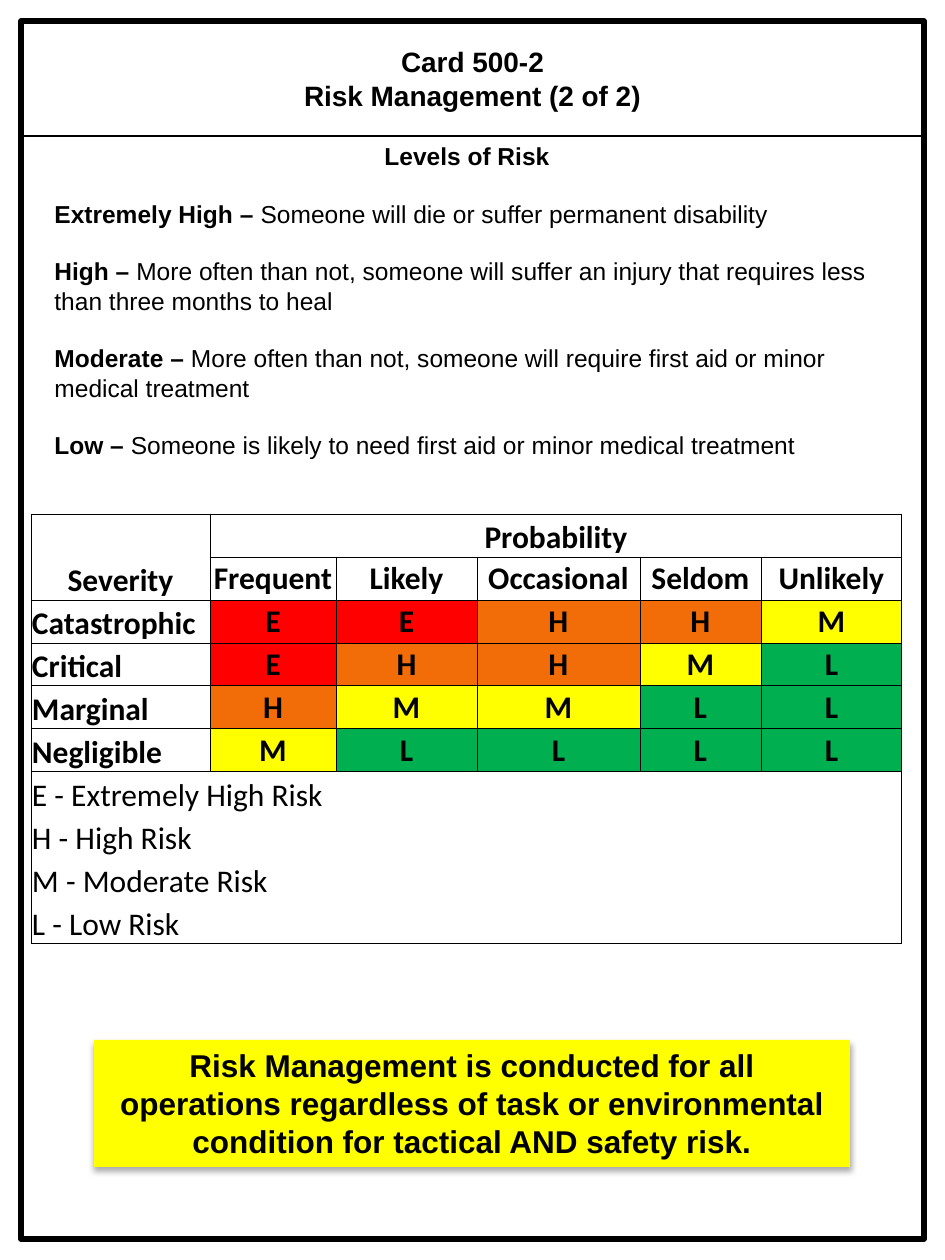
from dataclasses import dataclass

from lxml import etree
from pptx import Presentation
from pptx import util as u
from pptx.dml.color import RGBColor
from pptx.enum import shapes, text
from pptx.oxml import ns


@dataclass(frozen=True)
class Theme:
    ink: str = "000000"
    notice: str = "FFFF00"
    body_font: str = "Arial"
    matrix_font: str = "Calibri"
    title_size: int = 16
    body_size: int = 14
    matrix_size: int = 18
    notice_size: int = 18
    frame_line: float = 3.25
    rule_line: float = 1
    cell_line: float = 0.5


THEME = Theme()
RISK_COLOURS = {"E": "FF0000", "H": "F26C08", "M": "FFFF00", "L": "00B050"}
CENTER = text.PP_ALIGN.CENTER
MIDDLE = text.MSO_ANCHOR.MIDDLE
BOTTOM = text.MSO_ANCHOR.BOTTOM

LEVELS = [
    ("Extremely High – ", "Someone will die or suffer permanent disability"),
    ("High – ", "More often than not, someone will suffer an injury that "
                "requires less than three months to heal"),
    ("Moderate – ", "More often than not, someone will require first aid or "
                    "minor medical treatment"),
    ("Low – ", "Someone is likely to need first aid or minor medical treatment"),
]
PROBABILITIES = ["Frequent", "Likely", "Occasional", "Seldom", "Unlikely"]
SEVERITIES = {
    "Catastrophic": "EEHHM",
    "Critical": "EHHML",
    "Marginal": "HMMLL",
    "Negligible": "MLLLL",
}
LEGEND = ["E - Extremely High Risk", "H - High Risk", "M - Moderate Risk", "L - Low Risk"]
COLUMN_WIDTHS = [164, 15, 126, 141, 163, 121, 141]
ROW_HEIGHT = 43


def px(length):
    return u.Emu(round(length * 914400 / 126))


def box(left, top, width, height):
    return [px(length) for length in (left, top, width, height)]


def style(paragraph, size, font=THEME.body_font, bold=None, align=None):
    paragraph.font.size = u.Pt(size)
    paragraph.font.name = font
    paragraph.font.bold = bold
    paragraph.font.color.rgb = RGBColor.from_string(THEME.ink)
    paragraph.alignment = align


def add_outline(slide, area, weight):
    outline = slide.shapes.add_shape(shapes.MSO_SHAPE.RECTANGLE, *box(*area))
    outline.shadow.inherit = False
    outline.fill.background()
    outline.line.color.rgb = RGBColor.from_string(THEME.ink)
    outline.line.width = u.Pt(weight)
    return outline


def add_title(slide, area, title):
    frame = add_outline(slide, area, THEME.rule_line).text_frame
    frame.word_wrap = True
    frame.vertical_anchor = MIDDLE
    frame.paragraphs[0].text = title
    style(frame.paragraphs[0], THEME.title_size, bold=True, align=CENTER)


def add_text_area(slide, area):
    area_box = slide.shapes.add_textbox(*box(*area))
    area_box.text_frame.word_wrap = True
    area_box.text_frame.auto_size = text.MSO_AUTO_SIZE.SHAPE_TO_FIT_TEXT
    return area_box


def add_notice(slide, area, message):
    notice = add_text_area(slide, area)
    notice.fill.solid()
    notice.fill.fore_color.rgb = RGBColor.from_string(THEME.notice)
    paragraph = notice.text_frame.paragraphs[0]
    paragraph.text = message
    style(paragraph, THEME.notice_size, bold=True, align=CENTER)
    effects = etree.SubElement(notice.element.spPr, ns.qn("a:effectLst"))
    shadow = etree.SubElement(effects, ns.qn("a:outerShdw"), blurRad=str(u.Pt(3.5)),
                              dist=str(u.Pt(2.2)), dir="5400000", rotWithShape="0")
    colour = etree.SubElement(shadow, ns.qn("a:srgbClr"), val=THEME.ink)
    etree.SubElement(colour, ns.qn("a:alpha"), val="32000")


def add_levels(slide, area, heading, levels):
    frame = add_text_area(slide, area).text_frame
    frame.paragraphs[0].text = heading
    style(frame.paragraphs[0], THEME.body_size, bold=True, align=CENTER)
    for level, meaning in levels:
        paragraph = frame.add_paragraph()
        style(paragraph, THEME.body_size)
        paragraph.space_before = u.Pt(16.1)
        for words, bold in ((level, True), (meaning, False)):
            run = paragraph.add_run()
            run.text = words
            run.font.bold = bold


def set_borders(cell, sides):
    properties = cell._tc.get_or_add_tcPr()
    for side in "LRTB":
        line = etree.SubElement(properties, ns.qn(f"a:ln{side}"), w=str(u.Pt(THEME.cell_line)))
        if side in sides:
            fill = etree.SubElement(line, ns.qn("a:solidFill"))
            etree.SubElement(fill, ns.qn("a:srgbClr"), val=THEME.ink)
        else:
            etree.SubElement(line, ns.qn("a:noFill"))


def prepare_cell(cell, sides):
    set_borders(cell, sides)
    cell.fill.background()
    cell.margin_left = cell.margin_right = cell.margin_top = px(1)
    cell.margin_bottom = 0
    style(cell.text_frame.paragraphs[0], THEME.matrix_size, THEME.matrix_font)


def write_cell(cell, words, bold=True, align=None, anchor=BOTTOM):
    paragraph = cell.text_frame.paragraphs[0]
    paragraph.text = words
    style(paragraph, THEME.matrix_size, THEME.matrix_font, bold, align)
    cell.vertical_anchor = anchor


def add_matrix(slide, left, top):
    legend_top = 2 + len(SEVERITIES)
    row_count = legend_top + len(LEGEND)
    last_column = len(COLUMN_WIDTHS) - 1
    area = box(left, top, sum(COLUMN_WIDTHS), ROW_HEIGHT * row_count)
    matrix = slide.shapes.add_table(row_count, len(COLUMN_WIDTHS), *area).table
    matrix.first_row = matrix.horz_banding = False
    for column, width in zip(matrix.columns, COLUMN_WIDTHS):
        column.width = px(width)
    for r, row in enumerate(matrix.rows):
        row.height = px(ROW_HEIGHT)
        for c, cell in enumerate(row.cells):
            edges = {"L": c == 0, "R": c == last_column,
                     "T": r == legend_top, "B": r == row_count - 1}
            prepare_cell(cell, [side for side in edges if r < legend_top or edges[side]])

    matrix.cell(0, 0).merge(matrix.cell(1, 1))
    matrix.cell(0, 2).merge(matrix.cell(0, last_column))
    write_cell(matrix.cell(0, 0), "Severity", align=CENTER)
    write_cell(matrix.cell(0, 2), "Probability", align=CENTER)
    for c, probability in enumerate(PROBABILITIES, 2):
        write_cell(matrix.cell(1, c), probability, align=CENTER, anchor=MIDDLE)
    for r, (severity, risks) in enumerate(SEVERITIES.items(), 2):
        matrix.cell(r, 0).merge(matrix.cell(r, 1))
        write_cell(matrix.cell(r, 0), severity)
        for c, risk in enumerate(risks, 2):
            cell = matrix.cell(r, c)
            write_cell(cell, risk, align=CENTER, anchor=MIDDLE)
            cell.fill.solid()
            cell.fill.fore_color.rgb = RGBColor.from_string(RISK_COLOURS[risk])
    for i, entry in enumerate(LEGEND):
        r = legend_top + i
        matrix.cell(r, i % 2).merge(matrix.cell(r, 2))
        write_cell(matrix.cell(r, 0), entry, bold=False)


def main():
    deck = Presentation()
    deck.slide_width, deck.slide_height = px(945), px(1260)
    slide = deck.slides.add_slide(deck.slide_layouts[6])
    add_outline(slide, (21, 21, 903, 1218), THEME.frame_line)
    add_title(slide, (21, 21, 903, 115), "Card 500-2\nRisk Management (2 of 2)")
    add_notice(slide, (94, 1040, 756, 127),
               "Risk Management is conducted for all operations regardless of task or "
               "environmental condition for tactical AND safety risk.")
    add_matrix(slide, 31, 514)
    add_levels(slide, (42, 135, 850, 339), "Levels of Risk", LEVELS)
    deck.save("out.pptx")


if __name__ == "__main__":
    main()
